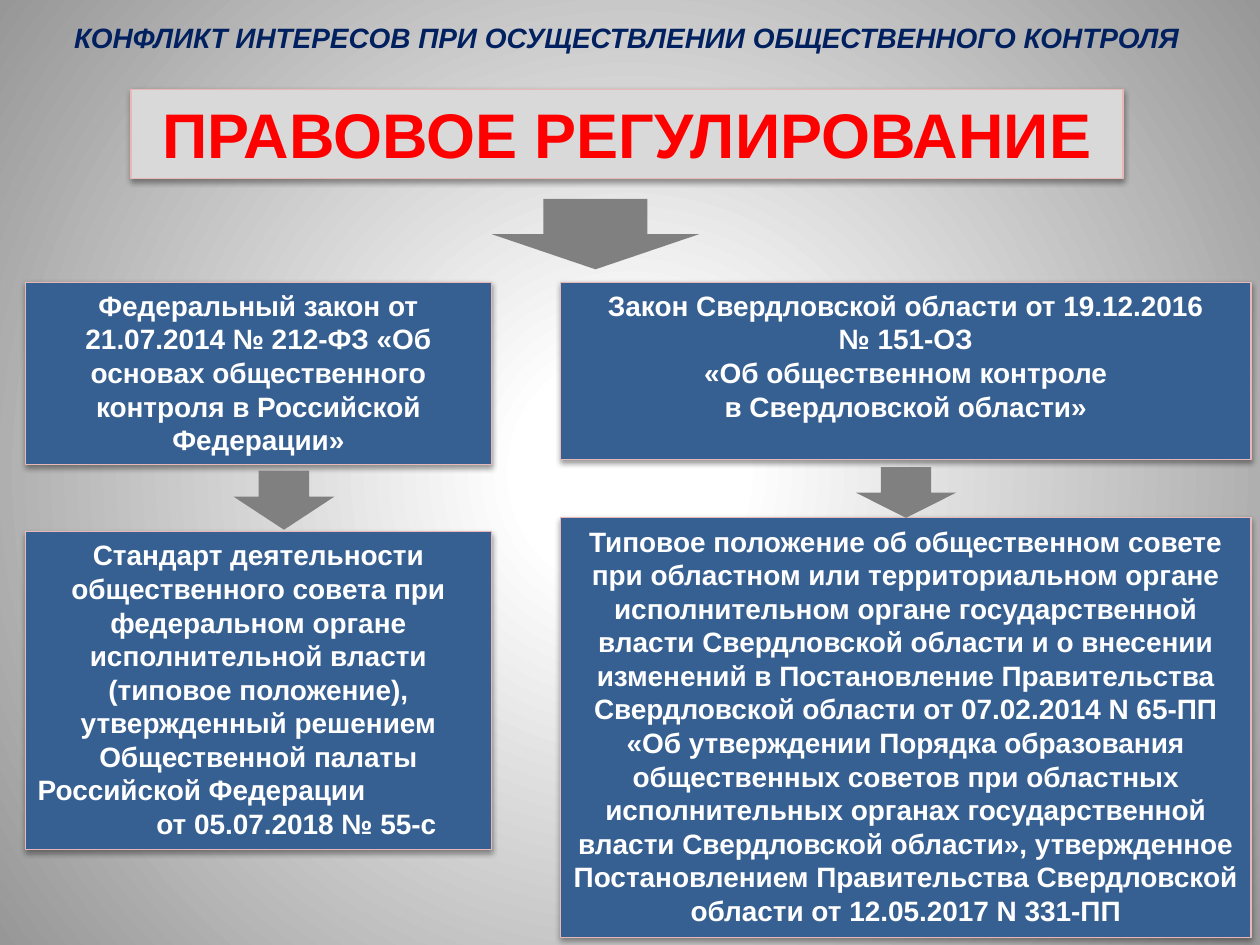
from pptx import Presentation
from pptx.dml.color import RGBColor
from pptx.enum.shapes import MSO_SHAPE
from pptx.enum.text import MSO_ANCHOR, PP_ALIGN
from pptx.oxml import parse_xml
from pptx.oxml.ns import nsdecls
from pptx.util import Cm, Pt

RECTANGLE = MSO_SHAPE.RECTANGLE
DOWN_ARROW = MSO_SHAPE.DOWN_ARROW
LEFT, CENTER = PP_ALIGN.LEFT, PP_ALIGN.CENTER
TOP = MSO_ANCHOR.TOP

WHITE = RGBColor(0xFF, 0xFF, 0xFF)
NAVY = RGBColor(0x00, 0x20, 0x60)
RED = RGBColor(0xFF, 0x00, 0x00)
BLUE = RGBColor(0x37, 0x60, 0x92)
PINK = RGBColor(0xE6, 0xB9, 0xB8)
LIGHT_GRAY = RGBColor(0xD9, 0xD9, 0xD9)
GRAY = RGBColor(0x80, 0x80, 0x80)

BACKGROUND = f"""<p:bg {nsdecls('p', 'a')}><p:bgPr>
<a:gradFill rotWithShape="1"><a:gsLst>
<a:gs pos="14000"><a:srgbClr val="FFFFFF"/></a:gs>
<a:gs pos="100000"><a:srgbClr val="979797"/></a:gs>
</a:gsLst><a:path path="circle">
<a:fillToRect l="50000" t="50000" r="50000" b="50000"/>
</a:path></a:gradFill><a:effectLst/></p:bgPr></p:bg>"""

SHADOW = f"""<a:effectLst {nsdecls('a')}>
<a:outerShdw blurRad="40000" dist="20000" dir="5400000" rotWithShape="0">
<a:srgbClr val="000000"><a:alpha val="38000"/></a:srgbClr>
</a:outerShdw></a:effectLst>"""


def write(paragraph, text, size=16, color=WHITE, italic=False,
          align=CENTER, indent=0):
    paragraph.alignment = align
    if indent:
        paragraph._p.get_or_add_pPr().set("marL", str(Cm(indent)))
    run = paragraph.add_run()
    run.text = text
    run.font.name = "Arial"
    run.font.size = Pt(size)
    run.font.bold = True
    run.font.italic = italic
    run.font.color.rgb = color


class SlideBuilder:
    """Holds the current slide and the style of its elements."""

    def __init__(self, slide):
        self.slide = slide

    def background(self):
        self.slide._element.cSld.insert(0, parse_xml(BACKGROUND))

    def fill_text(self, shape, items, **style):
        """Each item is a text, or a text with its own paragraph format."""
        frame = shape.text_frame
        frame.word_wrap = True
        frame.vertical_anchor = TOP
        for index, item in enumerate(items):
            text, own = item if isinstance(item, tuple) else (item, {})
            paragraph = frame.add_paragraph() if index else frame.paragraphs[0]
            write(paragraph, text, **style, **own)

    def heading(self, place, text, **style):
        box = self.slide.shapes.add_textbox(*map(Cm, place))
        self.fill_text(box, [text], **style)

    def panel(self, place, items, fill=BLUE, **style):
        shape = self.slide.shapes.add_shape(RECTANGLE, *map(Cm, place))
        shape.fill.solid()
        shape.fill.fore_color.rgb = fill
        shape.line.color.rgb = PINK
        shape.line.width = Pt(0.75)
        shape._element.spPr.append(parse_xml(SHADOW))
        self.fill_text(shape, items, **style)

    def arrow(self, place, head=0.5):
        shape = self.slide.shapes.add_shape(DOWN_ARROW, *map(Cm, place))
        shape.adjustments[1] = head
        shape.shadow.inherit = False
        shape.fill.solid()
        shape.fill.fore_color.rgb = GRAY
        shape.line.fill.background()


def main():
    presentation = Presentation()
    presentation.slide_width, presentation.slide_height = Cm(25.4), Cm(19.05)
    slide = presentation.slides.add_slide(presentation.slide_layouts[6])
    builder = SlideBuilder(slide)
    builder.background()

    # Heading and title
    builder.heading(
        (0.51, 0.28, 24.26, 0.94),
        "КОНФЛИКТ ИНТЕРЕСОВ ПРИ ОСУЩЕСТВЛЕНИИ ОБЩЕСТВЕННОГО КОНТРОЛЯ",
        color=NAVY, italic=True)
    builder.panel((2.64, 1.8, 20, 1.8), ["ПРАВОВОЕ РЕГУЛИРОВАНИЕ"],
                  fill=LIGHT_GRAY, size=36, color=RED)
    builder.arrow((9.91, 4.01, 4.19, 1.42))

    # Federal column
    left, width = 0.51, 9.4
    builder.panel((left, 5.69, width, 3.68), [
        "Федеральный закон от 21.07.2014 № 212-ФЗ «Об основах общественного "
        "контроля в Российской Федерации»"])
    builder.arrow((4.71, 9.49, 2.03, 1.19), head=0.56)
    builder.panel((left, 10.72, width, 6.4), [
        "Стандарт деятельности общественного совета при федеральном органе "
        "исполнительной власти (типовое положение), утвержденный решением "
        "Общественной палаты",
        ("Российской Федерации", {"align": LEFT}),
        ("от 05.07.2018 № 55-с", {"indent": 1.53})])

    # Regional column
    left, width = 11.3, 13.92
    builder.panel((left, 5.69, width, 3.58), [
        "Закон Свердловской области от 19.12.2016",
        "№ 151-ОЗ",
        "«Об общественном контроле",
        "в Свердловской области»"])
    builder.panel((left, 10.44, width, 8.46), [
        "Типовое положение об общественном совете при областном или "
        "территориальном органе исполнительном органе государственной власти "
        "Свердловской области и о внесении изменений в Постановление "
        "Правительства Свердловской области от 07.02.2014 N 65-ПП "
        "«Об утверждении Порядка образования общественных советов при "
        "областных исполнительных органах государственной власти "
        "Свердловской области», утвержденное Постановлением Правительства "
        "Свердловской области от 12.05.2017 N 331-ПП"])
    builder.arrow((17.25, 9.42, 2.03, 1.02))

    presentation.save("out.pptx")


if __name__ == "__main__":
    main()
